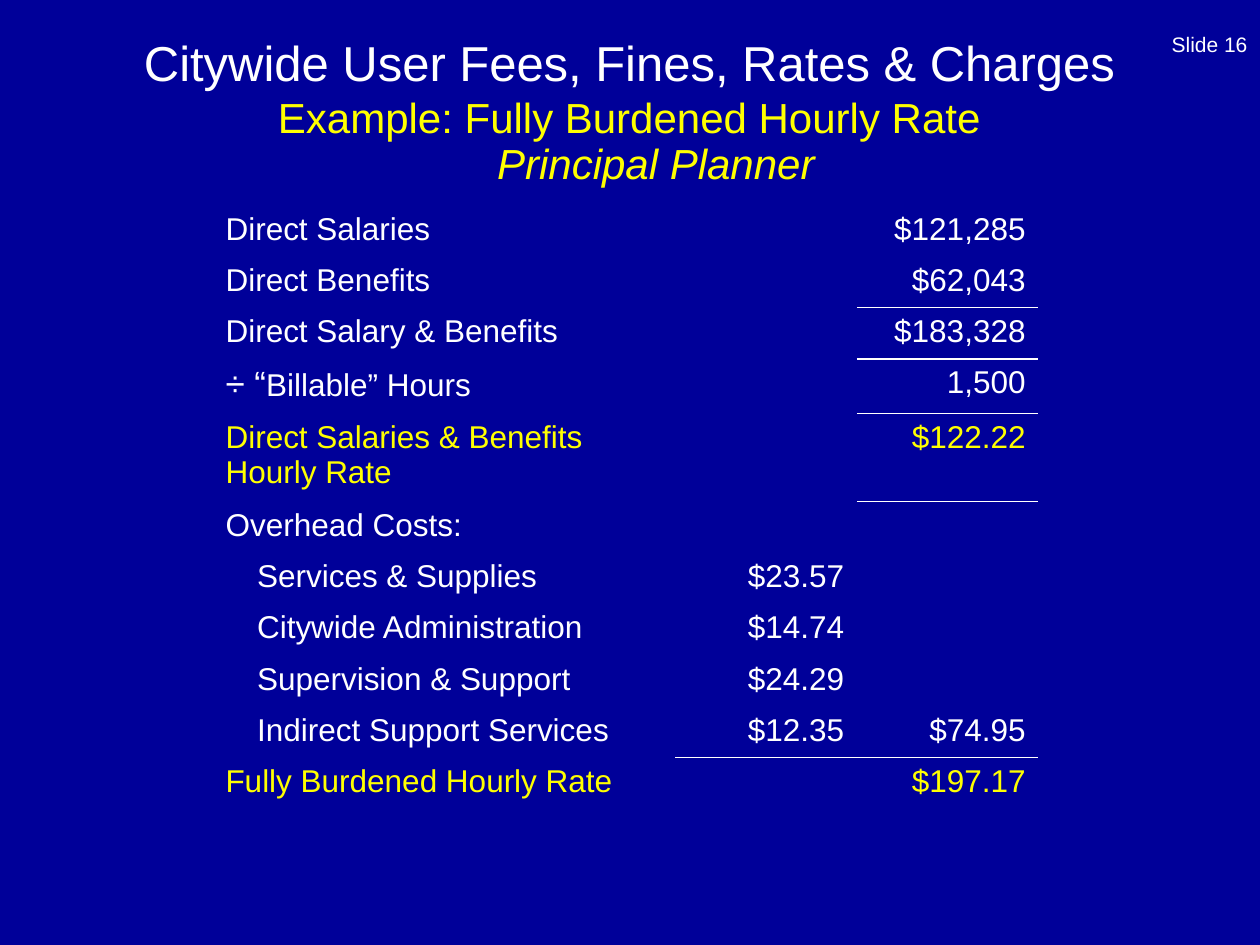
from lxml.etree import SubElement, Element
from pptx import Presentation
from pptx.dml.color import RGBColor
from pptx.enum.text import MSO_ANCHOR as Anchor, MSO_AUTO_SIZE as AutoSize, PP_ALIGN as Align
from pptx.oxml.ns import qn
from pptx.util import Inches, Pt

WHITE, YELLOW, NAVY = "FFFFFF", "FFFF00", "000099"
NO_STYLE = "{2D5ABB26-0587-4C30-8999-92F81FD0307C}"
COLUMN_WIDTHS = (3.67, 1.44, 1.44)
ROW_HEIGHT = 29.25
TALL_ROWS = {3: 31.4, 4: 50.3}
INDENTED_ROWS = range(6, 10)
YELLOW_ROWS = (4, 10)
RULED_CELLS = ((1, 2), (3, 2), (9, 1), (9, 2))
ROWS = (
    ("Direct Salaries", "", "$121,285"),
    ("Direct Benefits", "", "$62,043"),
    ("Direct Salary & Benefits", "", "$183,328"),
    ((("÷ “", {"size": 20}), ("Billable” Hours", {})), "", "1,500"),
    ("Direct Salaries & Benefits Hourly Rate", "", "$122.22"),
    ("Overhead Costs:", "", ""),
    ("Services & Supplies", "$23.57", ""),
    ("Citywide Administration", "$14.74", ""),
    ("Supervision & Support", "$24.29", ""),
    ("Indirect Support Services", "$12.35", "$74.95"),
    ("Fully Burdened Hourly Rate", "", "$197.17"),
)


def color(value):
    """Turn a hex string into a colour."""
    return RGBColor.from_string(value)


def write(paragraph, text, size=18, fill=WHITE, italic=False, align=None, spacing=None):
    """Append formatted text to a paragraph."""
    if align is not None:
        paragraph.alignment = align
    if spacing is not None:
        paragraph.line_spacing = spacing
    run = paragraph.add_run()
    run.text = text
    font = run.font
    font.name, font.size, font.italic = "Arial", Pt(size), italic
    font.color.rgb = color(fill)


def set_frame(shape, anchor=Anchor.TOP, top=0.05, bottom=0.05):
    """Set wrapping, anchor and margins, and return the first paragraph."""
    frame = shape.text_frame
    frame.word_wrap, frame.auto_size = True, AutoSize.NONE
    frame.vertical_anchor = anchor
    frame.margin_top, frame.margin_bottom = Inches(top), Inches(bottom)
    return frame.paragraphs[0]


def add_title(slide):
    """Fill the title placeholder with the heading and its example line."""
    title = slide.shapes.title
    title.left, title.top = Inches(0.33), Inches(0.17)
    title.width, title.height = Inches(9.33), Inches(0.83)
    paragraph = set_frame(title, top=0.09, bottom=0)
    write(paragraph, "Citywide User Fees, Fines, Rates & Charges", size=28, align=Align.CENTER)
    paragraph.add_line_break()
    write(paragraph, "Example: Fully Burdened Hourly Rate", size=24, fill=YELLOW)


def add_label(slide, box, text, frame=None, **style):
    """Add a text box with one line of text."""
    shape = slide.shapes.add_textbox(*map(Inches, box))
    write(set_frame(shape, **(frame or {})), text, **style)


def add_rule(cell, side):
    """Draw a white border on one side of a table cell."""
    line = Element(qn(f"a:{side}"), w=str(Pt(1)))
    fill = SubElement(line, qn("a:solidFill"))
    SubElement(fill, qn("a:srgbClr"), val=WHITE)
    cell._tc.get_or_add_tcPr().insert(0, line)


def fill_cell(cell, content, row, column):
    """Write one table cell in the style of its row and column."""
    cell.fill.background()
    paragraph = cell.text_frame.paragraphs[0]
    if column == 0 and row in INDENTED_ROWS:
        properties = paragraph._p.get_or_add_pPr()
        properties.set("marL", str(Inches(0.25)))
        properties.set("indent", "0")
    runs = ((content, {}),) if isinstance(content, str) else content
    for text, style in runs:
        if text:
            write(paragraph, text, fill=YELLOW if row in YELLOW_ROWS else WHITE,
                  align=Align.RIGHT if column else Align.LEFT, **style)


def add_rate_table(slide):
    """Add the table that builds up the hourly rate."""
    heights = [Pt(TALL_ROWS.get(row, ROW_HEIGHT)) for row in range(len(ROWS))]
    frame = slide.shapes.add_table(len(ROWS), len(COLUMN_WIDTHS), Inches(1.69), Inches(1.63),
                                   Inches(sum(COLUMN_WIDTHS)), sum(heights))
    frame.element.find(".//" + qn("a:tableStyleId")).text = NO_STYLE
    table = frame.table
    table.first_row = table.horz_banding = False
    for column, width in zip(table.columns, COLUMN_WIDTHS):
        column.width = Inches(width)
    for row, contents in enumerate(ROWS):
        table.rows[row].height = heights[row]
        for column, content in enumerate(contents):
            fill_cell(table.cell(row, column), content, row, column)
    for row, column in RULED_CELLS:
        add_rule(table.cell(row, column), "lnB")
        add_rule(table.cell(row + 1, column), "lnT")


def main():
    """Build the slide and save it."""
    presentation = Presentation()
    presentation.slide_width, presentation.slide_height = Inches(10), Inches(7.5)
    slide = presentation.slides.add_slide(presentation.slide_layouts[5])
    slide.background.fill.solid()
    slide.background.fill.fore_color.rgb = color(NAVY)
    add_label(slide, (7.67, 0, 2.33, 0.5), "Slide 16", frame={"anchor": Anchor.BOTTOM},
              size=12, align=Align.RIGHT)
    add_label(slide, (1.58, 1.08, 7.25, 0.42), "Principal Planner", frame={"top": 0.09, "bottom": 0},
              size=24, fill=YELLOW, italic=True, align=Align.CENTER, spacing=0.8)
    add_title(slide)
    add_rate_table(slide)
    presentation.save("out.pptx")


if __name__ == "__main__":
    main()
